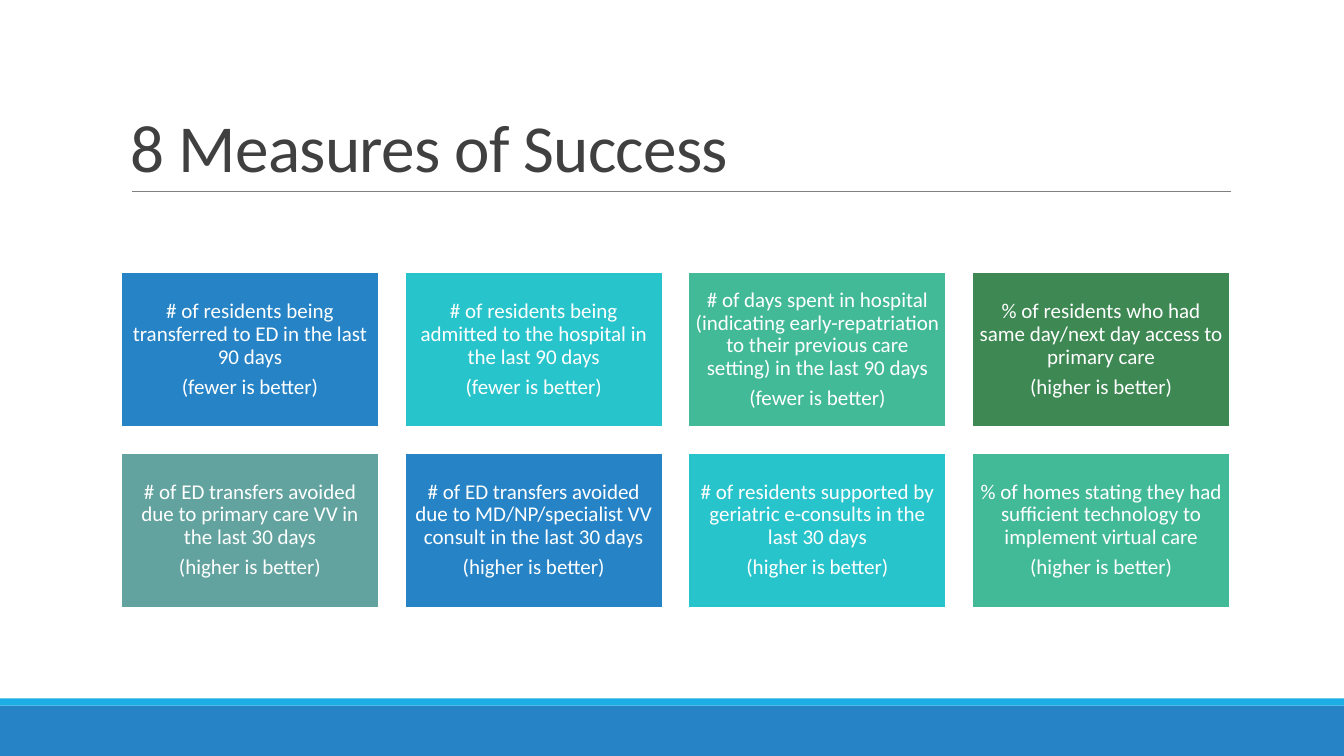
from pptx import Presentation
from pptx.dml.color import RGBColor as Rgb
from pptx.enum.shapes import MSO_CONNECTOR as Connector, MSO_SHAPE as Shape
from pptx.enum.text import MSO_ANCHOR as Anchor, PP_ALIGN as Align
from pptx.oxml.ns import qn
from pptx.util import Cm, Pt
from lxml.etree import SubElement

COLORS = {
    "white": "FFFFFF",
    "title": "404040",
    "rule": "808080",
    "sky": "1CADE4",
    "blue": "2683C6",
    "turquoise": "28C4CC",
    "mint": "42BA97",
    "green": "3E8853",
    "sage": "62A39F",
}
PAGE_WIDTH, PAGE_HEIGHT = 33.87, 19.05
COLUMNS = 4
CARD_LEFT, CARD_TOP = 3.05, 6.86
CARD_WIDTH, CARD_HEIGHT = 6.5, 3.9
COLUMN_STEP, ROW_STEP = 7.15, 4.55
FEWER, HIGHER = "(fewer is better)", "(higher is better)"
MEASURES = [
    ("blue", "# of residents being transferred to ED in the last 90 days", FEWER),
    ("turquoise", "# of residents being admitted to the hospital in the last 90 days", FEWER),
    ("mint", "# of days spent in hospital (indicating early-repatriation to their "
             "previous care setting) in the last 90 days", FEWER),
    ("green", "% of residents who had same day/next day access to primary care", HIGHER),
    ("sage", "# of ED transfers avoided due to primary care VV in the last 30 days", HIGHER),
    ("blue", "# of ED transfers avoided due to MD/NP/specialist VV consult in the last 30 days", HIGHER),
    ("turquoise", "# of residents supported by geriatric e-consults in the last 30 days", HIGHER),
    ("mint", "% of homes stating they had sufficient technology to implement virtual care", HIGHER),
]


def assign(target, values):
    for name, value in values.items():
        setattr(target, name, value)


class Painter:
    font = "Calibri"
    title_para = {"line_spacing": 0.85}
    card_para = {"line_spacing": 0.9, "space_after": Pt(5.25), "alignment": Align.CENTER}
    card_frame = {
        "word_wrap": True,
        "vertical_anchor": Anchor.MIDDLE,
        "margin_left": Cm(0.15),
        "margin_top": Cm(0.15),
        "margin_right": Cm(0.15),
        "margin_bottom": Cm(0.15),
    }

    def __init__(self, page):
        self.page = page

    def color(self, name):
        return Rgb.from_string(COLORS[name])

    def add_text(self, para, text, size, color, values):
        assign(para, values)
        span = para.add_run()
        span.text = text
        assign(span.font, {"name": self.font, "size": Pt(size)})
        span.font.color.rgb = self.color(color)
        return span

    def block(self, left, top, width, height, fill):
        box = self.page.shapes.add_shape(
            Shape.RECTANGLE, Cm(left), Cm(top), Cm(width), Cm(height))
        box.shadow.inherit = False
        box.fill.solid()
        box.fill.fore_color.rgb = self.color(fill)
        box.line.fill.background()
        return box

    def rule(self, left, right, top):
        line = self.page.shapes.add_connector(
            Connector.STRAIGHT, Cm(left), Cm(top), Cm(right), Cm(top))
        line.line.color.rgb = self.color("rule")
        line.line.width = Pt(0.5)
        SubElement(line._element.spPr, qn("a:effectLst"))

    def title(self, text, left, top, width, height):
        box = self.page.shapes.add_textbox(Cm(left), Cm(top), Cm(width), Cm(height))
        frame = box.text_frame
        assign(frame, {"word_wrap": True, "vertical_anchor": Anchor.BOTTOM})
        span = self.add_text(frame.paragraphs[0], text, 48, "title", self.title_para)
        span._r.get_or_add_rPr().set("spc", "-50")

    def card(self, left, top, fill, lines):
        box = self.block(left, top, CARD_WIDTH, CARD_HEIGHT, fill)
        box.line.color.rgb = self.color("white")
        box.line.width = Pt(1.25)
        frame = box.text_frame
        assign(frame, self.card_frame)
        for index, text in enumerate(lines):
            para = frame.add_paragraph() if index else frame.paragraphs[0]
            self.add_text(para, text, 15, "white", self.card_para)


def main():
    deck = Presentation()
    assign(deck, {"slide_width": Cm(PAGE_WIDTH), "slide_height": Cm(PAGE_HEIGHT)})
    painter = Painter(deck.slides.add_slide(deck.slide_layouts[6]))
    painter.block(0, 17.78, PAGE_WIDTH, 1.27, "blue")
    painter.block(0, 17.6, PAGE_WIDTH, 0.18, "sky")
    painter.rule(3.33, 31.01, 4.83)
    painter.title("8 Measures of Success", 3.05, 0.79, 27.94, 4.04)
    for index, (fill, *lines) in enumerate(MEASURES):
        row, column = divmod(index, COLUMNS)
        painter.card(CARD_LEFT + column * COLUMN_STEP, CARD_TOP + row * ROW_STEP, fill, lines)
    deck.save("out.pptx")


if __name__ == "__main__":
    main()
